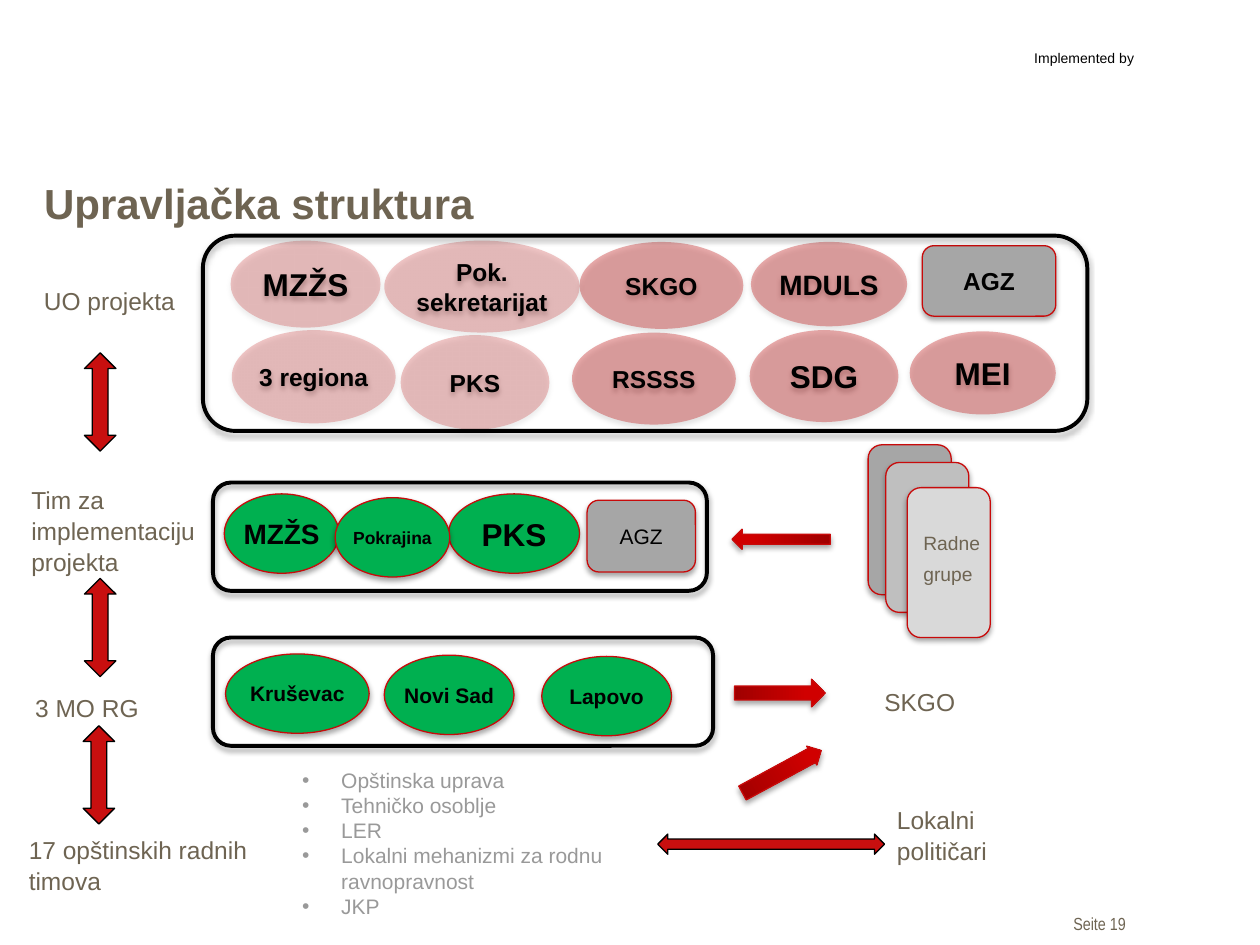
from dataclasses import dataclass

from lxml import etree
from pptx import Presentation
from pptx.dml.color import RGBColor
from pptx.enum.shapes import MSO_SHAPE
from pptx.enum.text import MSO_ANCHOR, PP_ALIGN
from pptx.oxml.ns import qn
from pptx.util import Emu, Pt

PX = 9144  # 100 px to the inch
ELLIPSE = MSO_SHAPE.OVAL
ROUNDED = MSO_SHAPE.ROUNDED_RECTANGLE
UP_ARROW = MSO_SHAPE.UP_ARROW
DOUBLE_ARROW = MSO_SHAPE.UP_DOWN_ARROW
LEFT, CENTER = PP_ALIGN.LEFT, PP_ALIGN.CENTER
MIDDLE, BOTTOM = MSO_ANCHOR.MIDDLE, MSO_ANCHOR.BOTTOM

COLORS = {
    "black": "000000", "brown": "6E6452", "bullet": "999999",
    "board": "C00000", "team": "00B050", "outline": "C80A0A",
    "link": "C80F0F", "tail": "A00000", "tip": "D00000",
    "gray": "A6A6A6", "mid_gray": "BFBFBF", "light_gray": "D9D9D9",
}


@dataclass(frozen=True)
class Box:
    x: int
    y: int
    w: int
    h: int

    def emu(self) -> list[Emu]:
        return [Emu(v * PX) for v in (self.x, self.y, self.w, self.h)]


@dataclass(frozen=True)
class Member:
    """A body taking part in the project; opacity is in percent."""
    name: str
    box: Box
    size: int
    fill: str
    opacity: int = 100
    outline: str | None = "outline"
    kind: int = ELLIPSE
    bold: bool = True


@dataclass(frozen=True)
class Label:
    text: str
    box: Box
    size: int = 14
    color: str = "brown"
    font: str = "Arial"
    spacing: float | None = 17.6


@dataclass(frozen=True)
class Arrow:
    box: Box
    rotation: float = 0
    shaft: float = 0.5


def lead(name: str, x: int, y: int, w: int, h: int, size: int) -> Member:
    return Member(name, Box(x, y, w, h), size, "board", 22, None)


def partner(name: str, x: int, y: int, w: int, h: int, size: int) -> Member:
    return Member(name, Box(x, y, w, h), size, "board", 32, None)


def team(name: str, x: int, y: int, w: int, size: int) -> Member:
    return Member(name, Box(x, y, w, 63), size, "team")


MEMBERS = [
    partner("RSSSS", 454, 264, 130, 73, 14),
    partner("SKGO", 460, 192, 130, 69, 14),
    lead("PKS", 318, 266, 118, 75, 14),
    Member("AGZ", Box(732, 195, 106, 56), 14, "gray", kind=ROUNDED),
    lead("Pok. sekretarijat", 305, 191, 155, 73, 14),
    partner("MEI", 722, 263, 116, 66, 18),
    partner("MDULS", 596, 192, 124, 67, 16),
    partner("SDG", 595, 262, 118, 73, 18),
    lead("MZŽS", 183, 191, 119, 69, 18),
    lead("3 regiona", 184, 262, 130, 74, 14),
    Member("AGZ", Box(466, 397, 86, 57), 12, "gray", kind=ROUNDED, bold=False),
    team("MZŽS", 178, 392, 91, 16),
    team("PKS", 356, 392, 104, 18),
    team("Pokrajina", 266, 395, 91, 10),
    team("Kruševac", 179, 519, 114, 12),
    team("Novi Sad", 305, 520, 103, 12),
    team("Lapovo", 430, 521, 103, 12),
]
GROUP_CARDS = [
    Member("", Box(x, y, 66, 119), 11, fill, kind=ROUNDED)
    for x, y, fill in [(689, 353, "gray"), (703, 367, "mid_gray"), (720, 387, "light_gray")]
]
FRAMES = [Box(161, 187, 702, 155), Box(169, 383, 392, 86), Box(169, 506, 397, 86)]
LABELS = [
    Label("Implemented by", Box(811, 34, 117, 24), 8, "black", spacing=None),
    Label("Seite 19", Box(842, 720, 101, 27), 10, font="Arial Narrow", spacing=None),
    Label("UO projekta", Box(25, 221, 144, 33)),
    Label("Tim za implementaciju projekta", Box(15, 379, 160, 86)),
    Label("3 MO RG", Box(18, 544, 218, 33)),
    Label("17 opštinskih radnih timova", Box(13, 657, 248, 59)),
    Label("Radne grupe", Box(723, 411, 76, 61), 11),
    Label("SKGO", Box(692, 539, 77, 35)),
    Label("Lokalni političari", Box(702, 633, 118, 59)),
]
FLOW_ARROWS = [
    Arrow(Box(612, 389, 16, 78), 270),
    Arrow(Box(608, 514, 22, 72), 90),
    Arrow(Box(612, 577, 17, 71), 61.6, 0.735),
]
LINK_ARROWS = [
    Arrow(Box(67, 280, 25, 78)),
    Arrow(Box(67, 459, 25, 78)),
    Arrow(Box(66, 576, 25, 78)),
    Arrow(Box(604, 580, 16, 180), 90),
]
MUNICIPAL_TEAM = [
    "Opštinska uprava", "Tehničko osoblje", "LER",
    "Lokalni mehanizmi za rodnu ravnopravnost", "JKP",
]


def rgb(color: str) -> RGBColor:
    return RGBColor.from_string(COLORS[color])


def set_font(paragraph, size: int, color: str, bold: bool = False, font: str = "Arial") -> None:
    for run in paragraph.runs:
        run.font.size, run.font.bold, run.font.name = Pt(size), bold, font
        run.font.color.rgb = rgb(color)


def add_shadow(shape) -> None:
    effects = shape._element.spPr.find(qn("a:effectLst"))
    shadow = etree.SubElement(effects, qn("a:outerShdw"), blurRad="40000", dist="23000",
                              dir="5400000", rotWithShape="0")
    black = etree.SubElement(shadow, qn("a:srgbClr"), val=COLORS["black"])
    etree.SubElement(black, qn("a:alpha"), val="35000")


def add_outlined(slide, kind: int, box: Box, outline: str | None, width: float = 0.75,
                 shadow: bool = True):
    shape = slide.shapes.add_shape(kind, *box.emu())
    shape.shadow.inherit = False
    if shadow:
        add_shadow(shape)
    if outline:
        shape.line.color.rgb = rgb(outline)
        shape.line.width = Pt(width)
    else:
        shape.line.fill.background()
    return shape


def draw_member(slide, member: Member) -> None:
    shape = add_outlined(slide, member.kind, member.box, member.outline)
    shape.fill.solid()
    shape.fill.fore_color.rgb = rgb(member.fill)
    if member.opacity < 100:
        color = shape._element.spPr.find(qn("a:solidFill"))[0]
        etree.SubElement(color, qn("a:alpha"), val=str(member.opacity * 1000))
    if not member.name:
        return
    frame = shape.text_frame
    frame.word_wrap, frame.vertical_anchor = True, MIDDLE
    if member.kind == ELLIPSE:
        frame.margin_left = frame.margin_right = 0
    frame.text = member.name
    frame.paragraphs[0].alignment = CENTER
    set_font(frame.paragraphs[0], member.size, "black", member.bold)


def draw_frame(slide, box: Box) -> None:
    add_outlined(slide, ROUNDED, box, "black", 2.25).fill.background()


def draw_label(slide, label: Label) -> None:
    frame = slide.shapes.add_textbox(*label.box.emu()).text_frame
    frame.word_wrap = True
    frame.text = label.text
    paragraph = frame.paragraphs[0]
    if label.spacing:
        paragraph.line_spacing = Pt(label.spacing)
    set_font(paragraph, label.size, label.color, font=label.font)


def draw_flow_arrow(slide, arrow: Arrow) -> None:
    shape = add_outlined(slide, UP_ARROW, arrow.box, "outline")
    shape.rotation = arrow.rotation
    shape.adjustments[0] = arrow.shaft
    shape.fill.gradient()
    shape.fill.gradient_angle = 90
    for stop, color, position in zip(shape.fill.gradient_stops, ("tail", "tip"), (0, 0.8)):
        stop.color.rgb = rgb(color)
        stop.position = position


def draw_link_arrow(slide, arrow: Arrow) -> None:
    shape = add_outlined(slide, DOUBLE_ARROW, arrow.box, "black", shadow=False)
    shape.rotation = arrow.rotation
    shape.fill.solid()
    shape.fill.fore_color.rgb = rgb("link")


def draw_bullets(slide, box: Box, items: list[str]) -> None:
    frame = slide.shapes.add_textbox(*box.emu()).text_frame
    frame.word_wrap = True
    frame.text = "\n".join(items)
    indent = 31 * PX
    for paragraph in frame.paragraphs:
        properties = paragraph._p.get_or_add_pPr()
        properties.set("marL", str(indent))
        properties.set("indent", str(-indent))
        etree.SubElement(properties, qn("a:buFont"), typeface="Arial")
        etree.SubElement(properties, qn("a:buChar"), char="•")
        set_font(paragraph, 12, "bullet")


def draw_title(slide, text: str, box: Box) -> None:
    title = slide.shapes.title
    title.left, title.top, title.width, title.height = box.emu()
    title.text_frame.text = text
    title.text_frame.vertical_anchor = BOTTOM
    title.text_frame.paragraphs[0].alignment = LEFT
    set_font(title.text_frame.paragraphs[0], 24, "brown", bold=True)


def main() -> None:
    deck = Presentation()
    deck.slide_width, deck.slide_height = Emu(1000 * PX), Emu(750 * PX)
    slide = deck.slides.add_slide(deck.slide_layouts[5])
    draw_title(slide, "Upravljačka struktura", Box(25, 133, 887, 53))
    for draw, items in [
        (draw_member, MEMBERS + GROUP_CARDS), (draw_frame, FRAMES), (draw_label, LABELS),
        (draw_flow_arrow, FLOW_ARROWS), (draw_link_arrow, LINK_ARROWS),
    ]:
        for item in items:
            draw(slide, item)
    draw_bullets(slide, Box(230, 604, 291, 155), MUNICIPAL_TEAM)
    deck.save("out.pptx")


if __name__ == "__main__":
    main()
